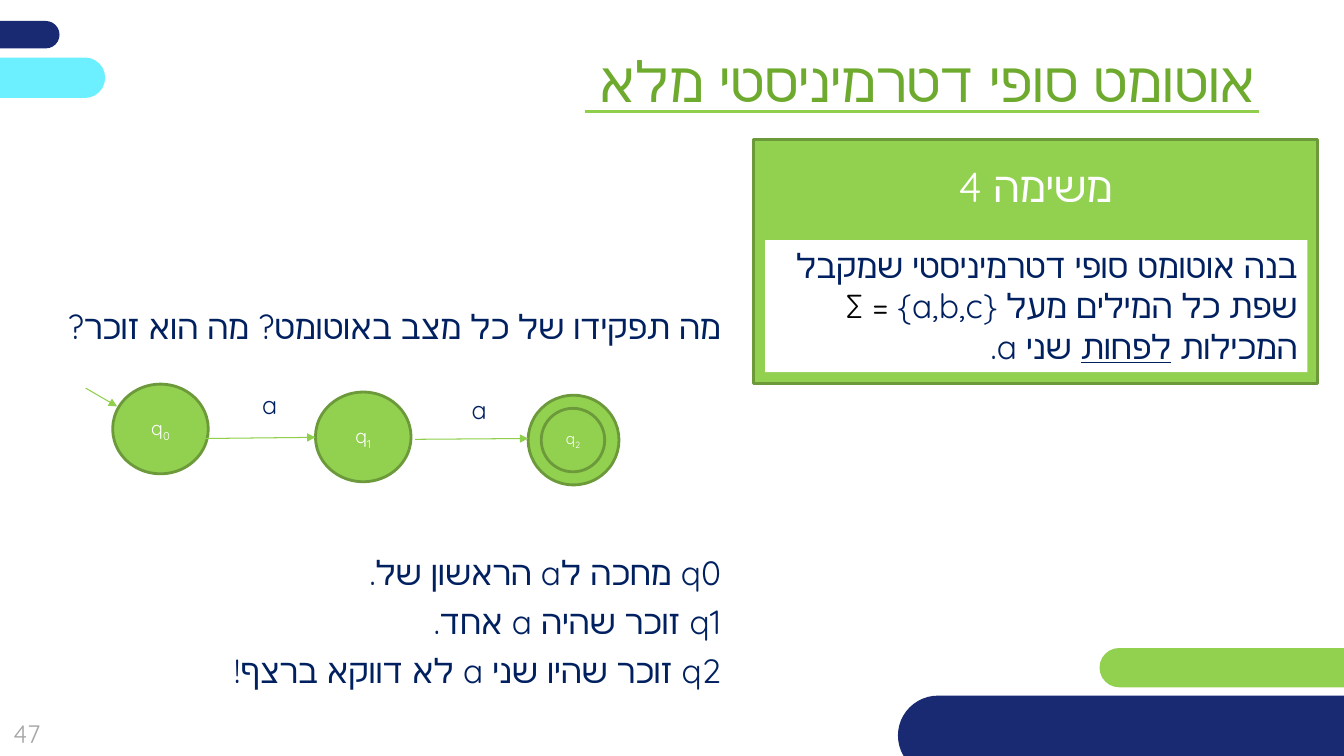
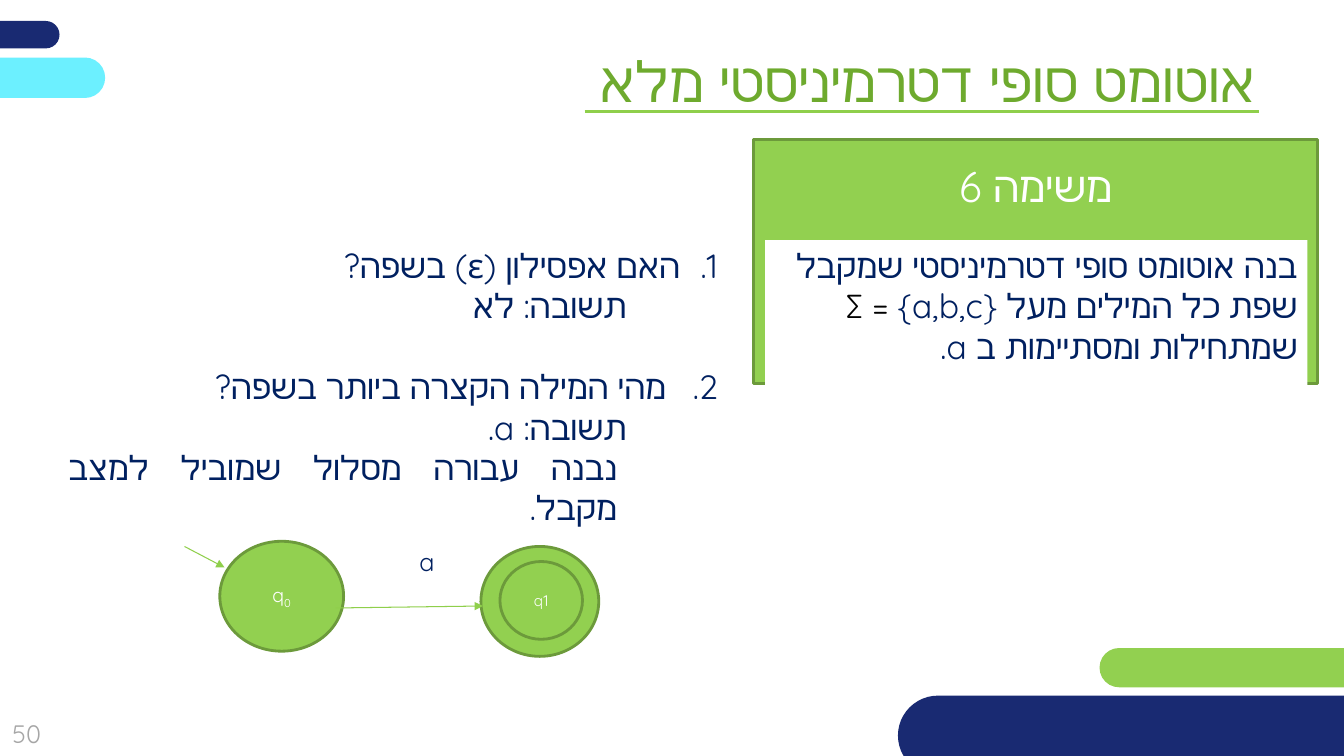
from dataclasses import dataclass

from lxml.etree import SubElement
from pptx import Presentation
from pptx.dml.color import RGBColor
from pptx.enum.shapes import MSO_CONNECTOR, MSO_SHAPE
from pptx.enum.text import MSO_ANCHOR, PP_ALIGN
from pptx.oxml.ns import qn
from pptx.util import Cm, Pt


@dataclass(frozen=True)
class Theme:
    font: str = "Quicksand"
    navy: str = "192A72"
    cyan: str = "6CF0FF"
    green: str = "92D050"
    outline: str = "6C9A3B"
    stroke: str = "8FCF4B"
    title: str = "6EAA2E"
    ink: str = "002060"
    black: str = "000000"
    white: str = "FFFFFF"
    gray: str = "A6A6A6"
    title_size: int = 40
    card_size: int = 30
    body_size: int = 24
    label_size: int = 18
    state_size: int = 14
    final_state_size: int = 11


theme = Theme()


def add_box(slide, box, kind=None, fill=None, line=None, anchor=MSO_ANCHOR.TOP):
    position = [Cm(length) for length in box]
    if kind is None:
        shape = slide.shapes.add_textbox(*position)
    else:
        shape = slide.shapes.add_shape(kind, *position)
        shape.shadow.inherit = False
        shape.fill.solid()
        shape.fill.fore_color.rgb = RGBColor.from_string(fill)
        if line:
            shape.line.color.rgb = RGBColor.from_string(line)
            shape.line.width = Pt(2)
        else:
            shape.line.fill.background()
    shape.text_frame.word_wrap = True
    shape.text_frame.vertical_anchor = anchor
    return shape


def write(shape, *runs, size=theme.body_size, color=theme.ink, align=PP_ALIGN.RIGHT,
          before=0, after=0, indent=0, hanging=0, number=None):
    frame = shape.text_frame
    paragraph = frame.add_paragraph() if frame.text else frame.paragraphs[0]
    paragraph.alignment = align
    paragraph.space_before = Pt(before)
    paragraph.space_after = Pt(after)
    properties = paragraph._p.get_or_add_pPr()
    properties.set("rtl", "1")
    properties.set("marL", str(Cm(indent)))
    properties.set("indent", str(Cm(-hanging)))
    if number:
        SubElement(properties, qn("a:buAutoNum"), type="arabicPeriod", startAt=str(number))
    for item in runs:
        text, style = item if isinstance(item, tuple) else (item, {})
        run = paragraph.add_run()
        run.text = text
        run.font.size = Pt(size)
        run.font.name = theme.font
        run.font.color.rgb = RGBColor.from_string(style.get("color", color))
        if style.get("underline"):
            run.font.underline = True
        run_properties = run._r.get_or_add_rPr()
        if style.get("subscript"):
            run_properties.set("baseline", "-25000")
        SubElement(run_properties, qn("a:cs"), typeface=theme.font)


bands = [
    ((-6.76, 0.53, 8.26, 0.69), theme.navy),
    ((27.71, 16.33, 13.23, 0.99), theme.green),
    ((-5.61, 1.45, 8.26, 1.02), theme.cyan),
    ((22.63, 17.53, 14.38, 2.01), theme.navy),
]
task_opening = "בנה אוטומט סופי דטרמיניסטי שמקבל שפת כל המילים מעל {a,b,c} "
alphabet = ("= ∑ ", {"color": theme.black})
subscript = {"subscript": True}

tasks = [
    {
        "page": "47",
        "heading": "משימה 4",
        "panel_height": 3.33,
        "task": [task_opening, alphabet, "המכילות ", ("לפחות", {"underline": True}), " שני a."],
        "body_box": (0.84, 7.59, 17.58, 10.5),
        "body": [
            ("מה תפקידו של כל מצב באוטומט? מה הוא זוכר?", {"after": 6}),
            ("q0 מחכה לa הראשון של.", {"before": 141, "after": 6}),
            ("q1 זוכר שהיה a אחד.", {"after": 6}),
            ("q2 זוכר שהיו שני a לא דווקא ברצף!", {"after": 6}),
        ],
        "states": [
            ((2.84, 9.68, 2.41, 2.26), None, ["q", ("0", subscript)]),
            ((7.95, 9.88, 2.41, 2.26), None, ["q", ("1", subscript)]),
            ((13.31, 9.96, 2.29, 2.26), (13.64, 10.29, 1.6, 1.6), ["q", ("2", subscript)]),
        ],
        "arrows": [
            (2.16, 9.78, 2.95, 10.24),
            (5.11, 11.05, 7.95, 11.02),
            (10.46, 11.07, 13.31, 11.05),
        ],
        "labels": [(6.1, 9.68, 1.14, 1.3), (11, 9.8, 1.52, 1.3)],
    },
    {
        "page": "50",
        "heading": "משימה 6",
        "panel_height": 4.37,
        "task": [task_opening, alphabet, "שמתחילות ומסתיימות ב a."],
        "body_box": (1.47, 6.05, 16.87, 8.46),
        "body": [
            ("האם אפסילון (ε) בשפה?", {"indent": 0.95, "hanging": 0.95, "number": 1}),
            ("תשובה: לא", {"indent": 2.3}),
            ("מהי המילה הקצרה ביותר בשפה?",
             {"before": 29, "indent": 1.3, "hanging": 1.3, "number": 2}),
            ("תשובה: a.", {"indent": 2.3}),
            ("נבנה עבורה מסלול שמוביל למצב מקבל.", {"indent": 2.54}),
        ],
        "states": [
            ((5.54, 13.64, 3.12, 2.77), None, ["q", ("0", subscript)]),
            ((12.12, 13.77, 2.97, 2.77), (12.6, 14.15, 2.08, 1.96), ["q1"]),
        ],
        "arrows": [(4.65, 13.77, 5.66, 14.3), (8.46, 15.32, 12.17, 15.27)],
        "labels": [(9.73, 13.64, 1.47, 1.57)],
    },
]

presentation = Presentation()
presentation.slide_width = Cm(33.87)
presentation.slide_height = Cm(19.05)

for task in tasks:
    slide = presentation.slides.add_slide(presentation.slide_layouts[6])

    for box, color in bands:
        band = add_box(slide, box, MSO_SHAPE.ROUNDED_RECTANGLE, color)
        band.adjustments[0] = 0.5

    page_number = add_box(slide, (0, 17.83, 1.35, 1.3), anchor=MSO_ANCHOR.MIDDLE)
    page_number.text_frame.margin_left = page_number.text_frame.margin_right = 0
    write(page_number, task["page"], size=theme.label_size, color=theme.gray,
          align=PP_ALIGN.CENTER)

    title = add_box(slide, (11.18, 1.04, 20.73, 1.96))
    write(title, "אוטומט סופי דטרמיניסטי מלא", size=theme.title_size, color=theme.title)

    card = add_box(slide, (19, 3.51, 14.2, 6.15), MSO_SHAPE.RECTANGLE, theme.green,
                   theme.outline, MSO_ANCHOR.MIDDLE)
    card.text_frame.margin_top = 0
    card.text_frame.margin_bottom = Cm(3.8)
    write(card, task["heading"], size=theme.card_size, color=theme.white,
          align=PP_ALIGN.CENTER)

    panel = add_box(slide, (19.28, 6.05, 13.67, task["panel_height"]),
                    MSO_SHAPE.RECTANGLE, theme.white)
    write(panel, *task["task"])

    body = add_box(slide, task["body_box"])
    for text, layout in task["body"]:
        write(body, text, align=PP_ALIGN.JUSTIFY, **layout)

    for outer, inner, name in task["states"]:
        for ring in filter(None, (outer, inner)):
            state = add_box(slide, ring, MSO_SHAPE.OVAL, theme.green, theme.outline,
                            MSO_ANCHOR.MIDDLE)
        state.text_frame.margin_left = state.text_frame.margin_right = 0
        write(state, *name, size=theme.final_state_size if inner else theme.state_size,
              color=theme.white, align=PP_ALIGN.CENTER)

    for box in task["labels"]:
        write(add_box(slide, box), "a", size=theme.label_size)

    title_rule = (14.73, 2.82, 31.72, 2.82)
    for ends in [title_rule, *task["arrows"]]:
        connector = slide.shapes.add_connector(
            MSO_CONNECTOR.STRAIGHT, *[Cm(length) for length in ends])
        connector.line.color.rgb = RGBColor.from_string(theme.stroke)
        connector.line.width = Pt(2.25 if ends is title_rule else 0.75)
        if ends is not title_rule:
            SubElement(connector.line._get_or_add_ln(), qn("a:tailEnd"), type="triangle")
        SubElement(connector._element.spPr, qn("a:effectLst"))

presentation.save("out.pptx")
